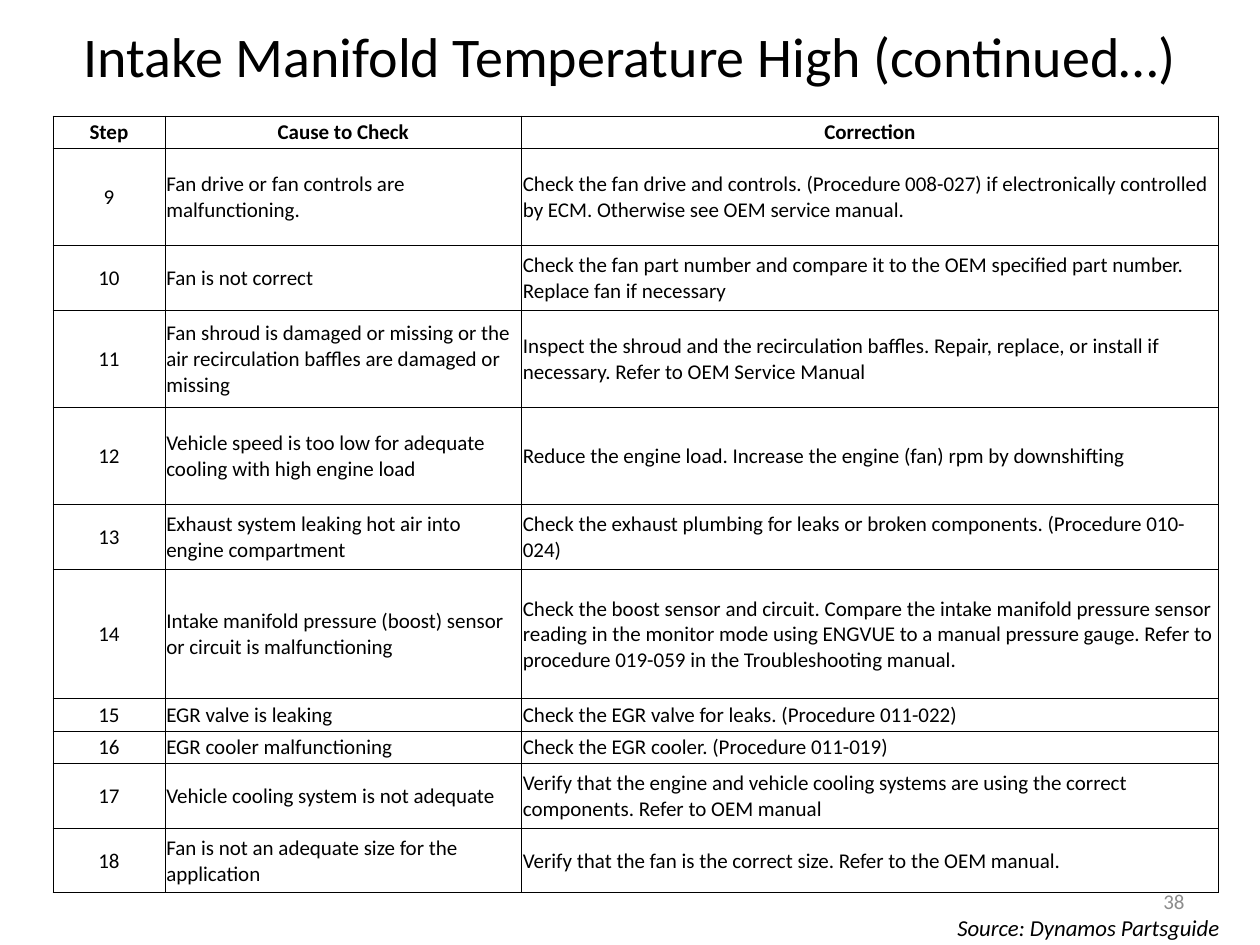
from lxml import etree
from pptx import Presentation
from pptx.dml.color import RGBColor
from pptx.enum.text import MSO_ANCHOR, PP_ALIGN
from pptx.oxml.ns import qn
from pptx.util import Inches, Pt

BLACK = RGBColor(0, 0, 0)
GRAY = RGBColor(0x8C, 0x8C, 0x8C)
LEFT, CENTER, RIGHT = PP_ALIGN.LEFT, PP_ALIGN.CENTER, PP_ALIGN.RIGHT
TOP, MIDDLE = MSO_ANCHOR.TOP, MSO_ANCHOR.MIDDLE

TABLE_HEIGHT = 6.17
COLUMN_WIDTHS = (0.89, 2.83, 5.53)
HEADERS = ("Step", "Cause to Check", "Correction")
FIRST_STEP = 9
CHECKS = [
    (3, "Fan drive or fan controls are malfunctioning.",
     "Check the fan drive and controls. (Procedure 008-027) if electronically "
     "controlled by ECM. Otherwise see OEM service manual."),
    (2, "Fan is not correct",
     "Check the fan part number and compare it to the OEM specified part number. "
     "Replace fan if necessary"),
    (3, "Fan shroud is damaged or missing or the air recirculation baffles are "
     "damaged or missing",
     "Inspect the shroud and the recirculation baffles. Repair, replace, or "
     "install if necessary. Refer to OEM Service Manual"),
    (3, "Vehicle speed is too low for adequate cooling with high engine load",
     "Reduce the engine load. Increase the engine (fan) rpm by downshifting"),
    (2, "Exhaust system leaking hot air into engine compartment",
     "Check the exhaust plumbing for leaks or broken components. "
     "(Procedure 010-024)"),
    (4, "Intake manifold pressure (boost) sensor or circuit is malfunctioning",
     "Check the boost sensor and circuit. Compare the intake manifold pressure "
     "sensor reading in the monitor mode using ENGVUE to a manual pressure gauge. "
     "Refer to procedure 019-059 in the Troubleshooting manual."),
    (1, "EGR valve is leaking",
     "Check the EGR valve for leaks. (Procedure 011-022)"),
    (1, "EGR cooler malfunctioning",
     "Check the EGR cooler. (Procedure 011-019)"),
    (2, "Vehicle cooling system is not adequate",
     "Verify that the engine and vehicle cooling systems are using the correct "
     "components. Refer to OEM manual"),
    (2, "Fan is not an adequate size for the application",
     "Verify that the fan is the correct size. Refer to the OEM manual."),
]


class PageBuilder:
    font_name = "Calibri"
    border_width = Pt(0.5)

    def __init__(self, page):
        self.page = page

    def style_text(self, paragraph, text, size, color=BLACK, align=LEFT,
                   bold=False, italic=False):
        paragraph.text = text
        paragraph.alignment = align
        font = paragraph.font
        font.name = self.font_name
        font.size = Pt(size)
        font.color.rgb = color
        font.bold = bold
        font.italic = italic

    def text(self, left, top, width, height, text, size, anchor=MIDDLE, **style):
        box = self.page.shapes.add_textbox(
            Inches(left), Inches(top), Inches(width), Inches(height))
        frame = box.text_frame
        frame.word_wrap = True
        frame.vertical_anchor = anchor
        self.style_text(frame.paragraphs[0], text, size, **style)

    def border(self, cell):
        properties = cell._tc.get_or_add_tcPr()
        for index, side in enumerate(("a:lnL", "a:lnR", "a:lnT", "a:lnB")):
            line = etree.Element(qn(side), w=str(self.border_width))
            fill = etree.SubElement(line, qn("a:solidFill"))
            etree.SubElement(fill, qn("a:srgbClr"), val=str(BLACK))
            properties.insert(index, line)

    def cell(self, cell, text, align, bold):
        cell.margin_left = cell.margin_right = cell.margin_top = Inches(0.01)
        cell.margin_bottom = 0
        cell.vertical_anchor = MIDDLE
        cell.fill.background()
        self.border(cell)
        self.style_text(cell.text_frame.paragraphs[0], text, 12,
                        align=align, bold=bold)

    def table(self, left, top, height, widths, rows, line_counts):
        table = self.page.shapes.add_table(
            len(rows), len(widths), Inches(left), Inches(top),
            Inches(sum(widths)), Inches(height)).table
        table.first_row = False
        table.horz_banding = False
        for column, width in zip(table.columns, widths):
            column.width = Inches(width)
        line_height = height / sum(line_counts)
        for row_index, (values, lines) in enumerate(zip(rows, line_counts)):
            table.rows[row_index].height = Inches(lines * line_height)
            is_header = row_index == 0
            for column_index, value in enumerate(values):
                align = CENTER if is_header or column_index == 0 else LEFT
                self.cell(table.cell(row_index, column_index), value, align, is_header)


def main():
    deck = Presentation()
    deck.slide_width = Inches(10)
    deck.slide_height = Inches(7.5)
    builder = PageBuilder(deck.slides.add_slide(deck.slide_layouts[6]))

    builder.text(0.5, 0, 9, 0.87, "Intake Manifold Temperature High (continued…)",
                 32, align=CENTER)
    builder.text(7.5, 7.2, 2.5, 0.32, "Source: Dynamos Partsguide", 13,
                 anchor=TOP, italic=True)
    rows = [HEADERS] + [
        (str(step), cause, correction)
        for step, (_, cause, correction) in enumerate(CHECKS, FIRST_STEP)]
    line_counts = [1] + [lines for lines, _, _ in CHECKS]
    builder.table(0.42, 0.92, TABLE_HEIGHT, COLUMN_WIDTHS, rows, line_counts)
    builder.text(7.17, 6.95, 2.33, 0.4, "38", 12, color=GRAY, align=RIGHT)

    deck.save("out.pptx")


if __name__ == "__main__":
    main()
